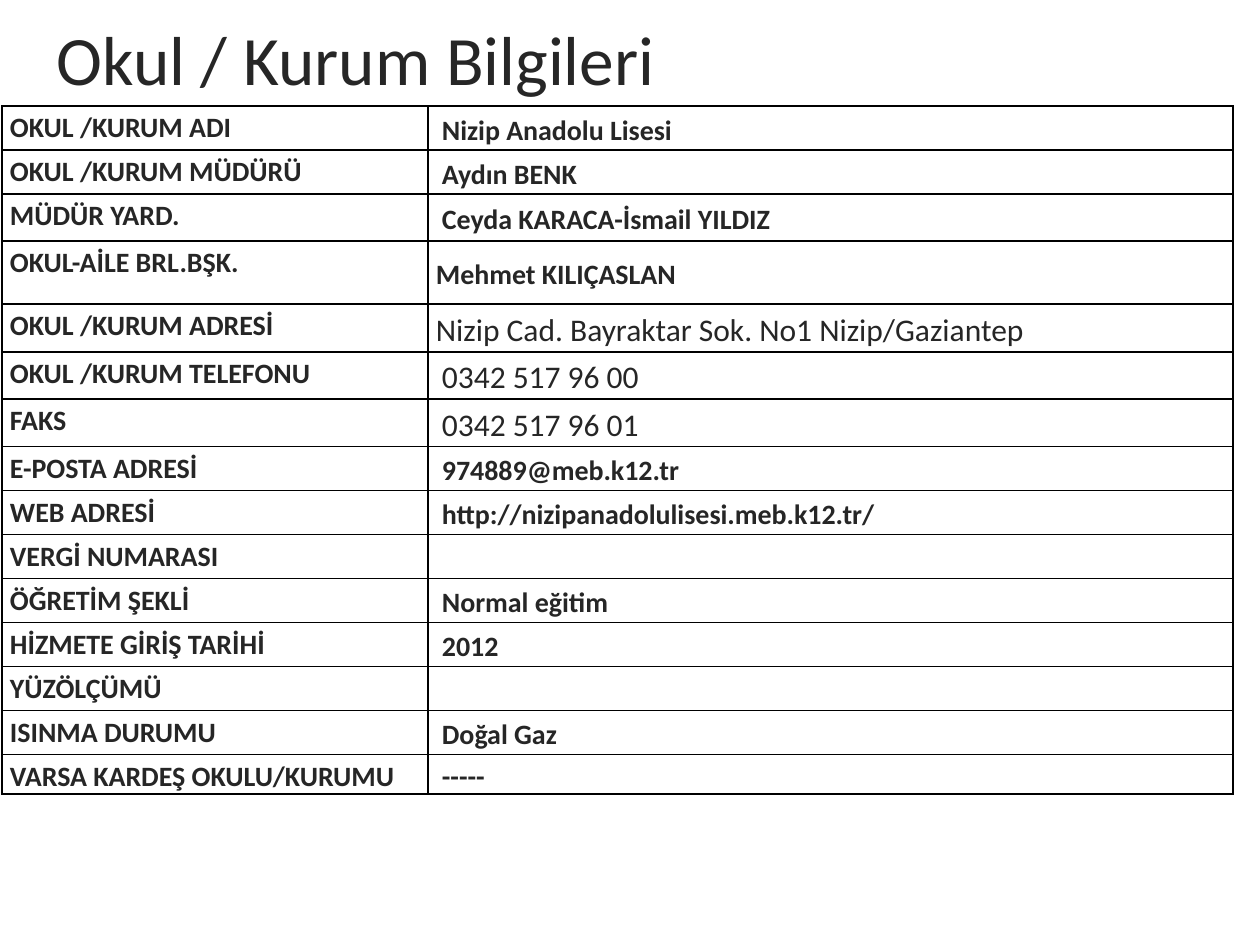
from dataclasses import dataclass

from lxml import etree
from pptx import Presentation
from pptx import util as u
from pptx.dml.color import RGBColor
from pptx.enum import text
from pptx.oxml import ns

PX = u.Inches(1) // 126


@dataclass(frozen=True)
class Theme:
    font: str = "Calibri"
    ink: str = "262626"
    border: str = "000000"
    title_size: float = 39.6
    body_size: int = 16
    contact_size: int = 18


THEME = Theme()
COLUMNS = (426, 805)
INSET = 8
INDENT = 14
ROW = 44
TALL_ROW = 48

SCHOOL_INFO = [
    ("OKUL /KURUM ADI", "Nizip Anadolu Lisesi", ROW),
    ("OKUL /KURUM MÜDÜRÜ", "Aydın BENK", ROW),
    ("MÜDÜR YARD.", "Ceyda KARACA-İsmail YILDIZ", 47),
    ("OKUL-AİLE BRL.BŞK.", "Mehmet KILIÇASLAN", 63),
    ("OKUL /KURUM ADRESİ", "Nizip Cad. Bayraktar Sok. No1 Nizip/Gaziantep", TALL_ROW),
    ("OKUL /KURUM TELEFONU", "0342 517 96 00", 47),
    ("FAKS", "0342 517 96 01", TALL_ROW),
    ("E-POSTA ADRESİ", "974889@meb.k12.tr", ROW),
    ("WEB ADRESİ", "http://nizipanadolulisesi.meb.k12.tr/", ROW),
    ("VERGİ NUMARASI", "", ROW),
    ("ÖĞRETİM ŞEKLİ", "Normal eğitim", ROW),
    ("HİZMETE GİRİŞ TARİHİ", "2012", ROW),
    ("YÜZÖLÇÜMÜ", "", ROW),
    ("ISINMA DURUMU", "Doğal Gaz", ROW),
    ("VARSA KARDEŞ OKULU/KURUMU", "-----", 39),
]
CONTACT_LABELS = {"OKUL /KURUM ADRESİ", "OKUL /KURUM TELEFONU", "FAKS"}
UNINDENTED_LABELS = {"OKUL-AİLE BRL.BŞK.", "OKUL /KURUM ADRESİ"}


def style_font(font, size, bold=False):
    font.name = THEME.font
    font.size = u.Pt(size)
    font.bold = bold
    font.color.rgb = RGBColor.from_string(THEME.ink)


def set_title(slide, words, left, top, width, height):
    title = slide.shapes.title
    title.left, title.top = left * PX, top * PX
    title.width, title.height = width * PX, height * PX
    frame = title.text_frame
    frame.text = words
    frame.word_wrap = True
    frame.auto_size = text.MSO_AUTO_SIZE.NONE
    frame.vertical_anchor = text.MSO_ANCHOR.MIDDLE
    para = frame.paragraphs[0]
    para.alignment = text.PP_ALIGN.LEFT
    style_font(para.runs[0].font, THEME.title_size)


def add_borders(cell):
    properties = cell._tc.get_or_add_tcPr()
    for side in ("lnL", "lnR", "lnT", "lnB"):
        line = etree.SubElement(properties, ns.qn(f"a:{side}"), w=str(u.Pt(1)))
        fill = etree.SubElement(line, ns.qn("a:solidFill"))
        etree.SubElement(fill, ns.qn("a:srgbClr"), val=THEME.border)


def fill_cell(cell, words, size, bold, anchor, indent=INSET):
    add_borders(cell)
    cell.fill.background()
    cell.margin_left, cell.margin_right = indent * PX, INSET * PX
    cell.margin_top = cell.margin_bottom = 0
    cell.vertical_anchor = anchor
    cell.text_frame.text = words
    para = cell.text_frame.paragraphs[0]
    para.line_spacing = 1.15
    for span in para.runs:
        style_font(span.font, size, bold)


def add_info_table(slide, left, top):
    total_height = sum(height for _, _, height in SCHOOL_INFO)
    frame = slide.shapes.add_table(
        len(SCHOOL_INFO), len(COLUMNS),
        left * PX, top * PX, sum(COLUMNS) * PX, total_height * PX,
    )
    table = frame.table
    table.first_row = table.horz_banding = False
    for column, width in zip(table.columns, COLUMNS):
        column.width = width * PX
    for row, (label, value, height) in zip(table.rows, SCHOOL_INFO):
        row.height = height * PX
        contact = label in CONTACT_LABELS
        size = THEME.contact_size if contact else THEME.body_size
        indent = INSET if label in UNINDENTED_LABELS else INDENT
        fill_cell(row.cells[0], label, THEME.body_size, True, text.MSO_ANCHOR.TOP)
        fill_cell(row.cells[1], value, size, not contact, text.MSO_ANCHOR.MIDDLE, indent)


def main():
    deck = Presentation()
    deck.slide_width, deck.slide_height = u.Inches(10), u.Inches(7.5)
    slide = deck.slides.add_slide(deck.slide_layouts[5])
    set_title(slide, "Okul / Kurum Bilgileri", 44, 10, 1173, 95)
    add_info_table(slide, 2, 106)
    deck.save("out.pptx")


if __name__ == "__main__":
    main()
